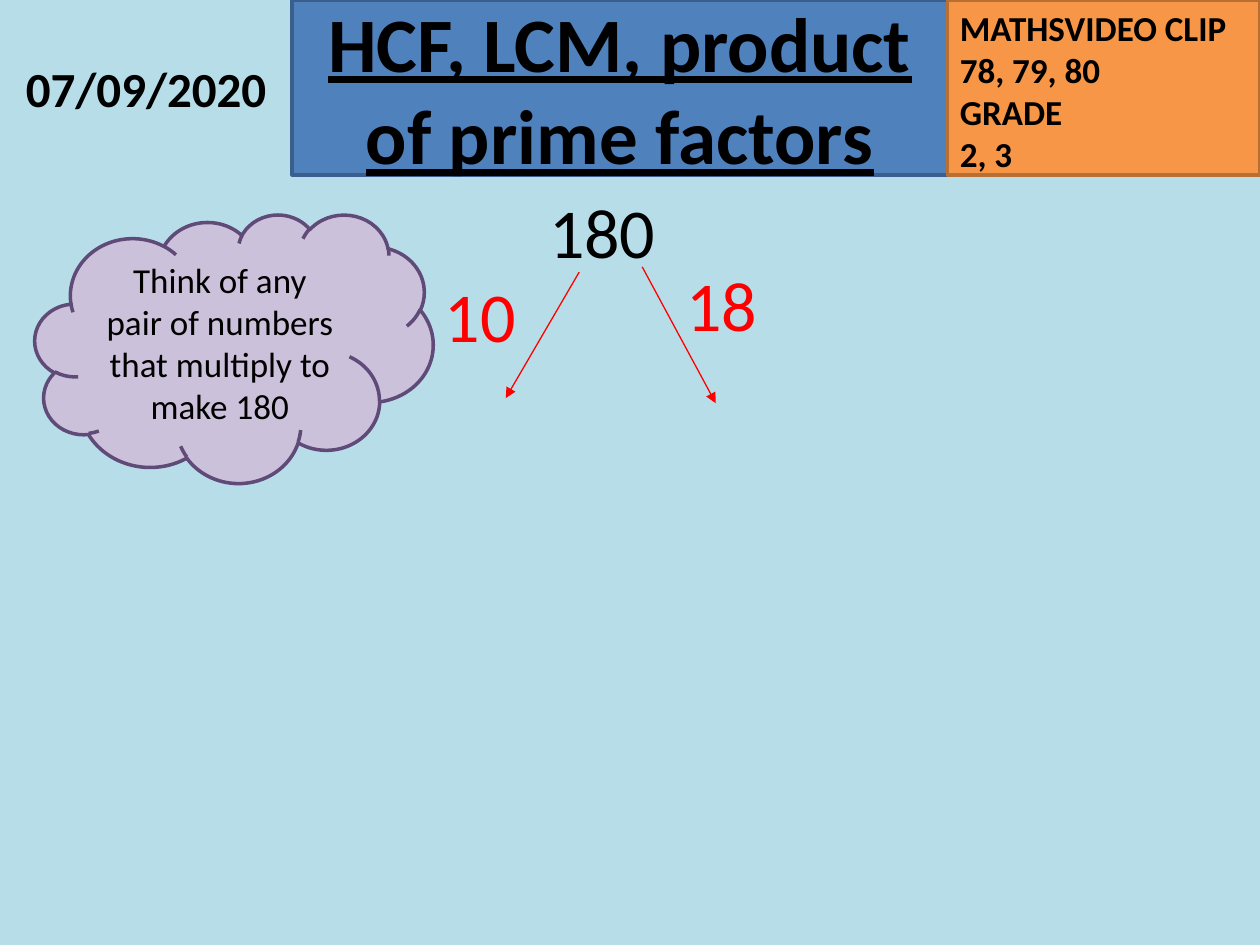
import dataclasses

import lxml.etree
import pptx
import pptx.dml.color
import pptx.enum.shapes
import pptx.enum.text
import pptx.oxml.ns
import pptx.util

Pt = pptx.util.Pt
RGB = pptx.dml.color.RGBColor.from_string
SHAPE = pptx.enum.shapes.MSO_SHAPE
ANCHOR = pptx.enum.text.MSO_ANCHOR
ALIGN = pptx.enum.text.PP_ALIGN
qn = pptx.oxml.ns.qn


@dataclasses.dataclass(frozen=True)
class Theme:
    font: str = "Calibri"
    background: str = "B7DEE8"
    text: str = "000000"
    accent: str = "FF0000"
    title_fill: str = "4F81BD"
    title_line: str = "3A5F8C"
    clip_fill: str = "F79646"
    clip_line: str = "B76F34"
    cloud_fill: str = "CCC1DA"
    cloud_line: str = "5F4A78"
    title_size: float = 44
    number_size: float = 40
    date_size: float = 28
    body_size: float = 20
    outline: float = 2
    arrow: float = 0.75


def write(tf, text, *, size, font, color, bold=False, underline=False,
          align=ALIGN.LEFT, anchor=ANCHOR.TOP):
    tf.word_wrap = True
    tf.auto_size = pptx.enum.text.MSO_AUTO_SIZE.NONE
    tf.vertical_anchor = anchor
    for i, line in enumerate(text.split("\n")):
        p = tf.add_paragraph() if i else tf.paragraphs[0]
        p.alignment = align
        r = p.add_run()
        r.text = line
        r.font.name = font
        r.font.size = Pt(size)
        r.font.color.rgb = RGB(color)
        r.font.bold = bold
        r.font.underline = underline


class Builder:
    def __init__(self, s, theme):
        self.s = s
        self.theme = theme
        s.background.fill.solid()
        s.background.fill.fore_color.rgb = RGB(theme.background)

    def paint(self, sp, fill, line):
        sp.fill.solid()
        sp.fill.fore_color.rgb = RGB(fill)
        sp.line.color.rgb = RGB(line)
        sp.line.width = Pt(self.theme.outline)

    def text(self, tf, text, **fmt):
        write(tf, text, **{"font": self.theme.font, "color": self.theme.text, **fmt})

    def title(self, box, text, fill, line):
        sp = self.s.shapes.title
        sp.left, sp.top, sp.width, sp.height = map(Pt, box)
        self.paint(sp, fill, line)
        self.text(sp.text_frame, text, size=self.theme.title_size, bold=True,
                  underline=True, align=ALIGN.CENTER, anchor=ANCHOR.MIDDLE)

    def shape(self, kind, box, text, fill, line, **fmt):
        sp = self.s.shapes.add_shape(kind, *map(Pt, box))
        sp.shadow.inherit = False
        self.paint(sp, fill, line)
        self.text(sp.text_frame, text, **fmt)

    def label(self, box, text, **fmt):
        sp = self.s.shapes.add_textbox(*map(Pt, box))
        self.text(sp.text_frame, text, **fmt)

    def arrow(self, start, end):
        straight = pptx.enum.shapes.MSO_CONNECTOR.STRAIGHT
        c = self.s.shapes.add_connector(straight, *map(Pt, start + end))
        c.line.color.rgb = RGB(self.theme.accent)
        c.line.width = Pt(self.theme.arrow)
        lxml.etree.SubElement(c.line._get_or_add_ln(), qn("a:tailEnd"), type="triangle")
        lxml.etree.SubElement(c._element.spPr, qn("a:effectLst"))


def main():
    prs = pptx.Presentation()
    prs.slide_width, prs.slide_height = Pt(720), Pt(540)
    theme = Theme()
    b = Builder(prs.slides.add_slide(prs.slide_layouts[5]), theme)

    header_height = 100
    title_left, clip_left = 167, 541.4
    b.title((title_left, 0, clip_left - title_left, header_height),
            "HCF, LCM, product of prime factors", theme.title_fill, theme.title_line)
    b.shape(SHAPE.RECTANGLE, (clip_left, 0, 720 - clip_left, header_height),
            "MATHSVIDEO CLIP\n78, 79, 80\nGRADE\n2, 3",
            theme.clip_fill, theme.clip_line, size=theme.body_size, bold=True)
    b.label((0, 0, title_left, header_height), "07/09/2020", size=theme.date_size,
            bold=True, align=ALIGN.CENTER, anchor=ANCHOR.MIDDLE)

    b.arrow((367, 152.5), (409, 230.4))
    b.arrow((331, 155.5), (289, 227.5))
    for text, left, top, width, color in (
        ("180", 306.7, 104.4, 108, theme.text),
        ("10", 247, 152, 60, theme.accent),
        ("18", 385.2, 146, 60, theme.accent),
    ):
        b.label((left, top, width, 55.5), text, size=theme.number_size, color=color)

    b.shape(SHAPE.CLOUD, (20, 122.4, 227.5, 153.4),
            "Think of any pair of numbers that multiply to make 180",
            theme.cloud_fill, theme.cloud_line, size=theme.body_size,
            align=ALIGN.CENTER, anchor=ANCHOR.MIDDLE)
    prs.save("out.pptx")


if __name__ == "__main__":
    main()
